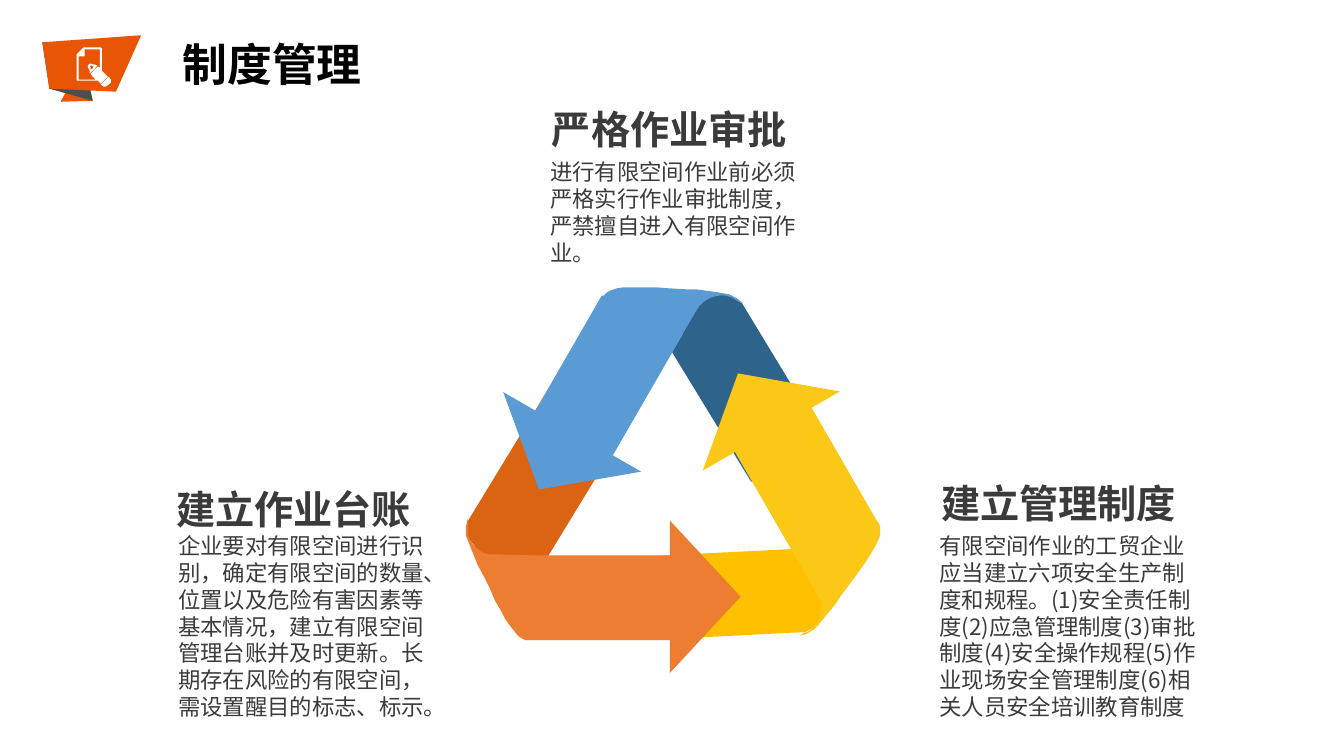
import pptx
import pptx.util
import pptx.dml.color
import pptx.enum.shapes
import pptx.enum.text
import lxml.etree

Inches = pptx.util.Inches
Pt = pptx.util.Pt
PP_ALIGN = pptx.enum.text.PP_ALIGN
AUTO_SIZE = pptx.enum.text.MSO_AUTO_SIZE
FONT = "Noto Sans CJK SC"
COLORS = {
    "black": "000000", "text": "3B3B3B", "white": "FFFFFF",
    "badge": "E85504", "badge_shade": "494F54",
    "orange": "ED7D31", "orange_shade": "DB6413",
    "blue": "5B9BD5", "blue_shade": "2E648B",
    "yellow": "FCC818", "yellow_shade": "FFC000",
}


def add_outline(shapes, color, *contours):
    builder = None
    for contour in contours:
        points = [(Inches(x), Inches(y)) for x, y in contour]
        if builder is None:
            builder = shapes.build_freeform(*points[0], scale=1.0)
        else:
            builder.move_to(*points[0])
        builder.add_line_segments(points[1:], close=True)
    shape = builder.convert_to_shape()
    shape.shadow.inherit = False
    shape.fill.solid()
    shape.fill.fore_color.rgb = pptx.dml.color.RGBColor.from_string(COLORS[color])
    shape.line.fill.background()


def write_text(shape, text, size, color, bold, align, spacing, wrap=True):
    frame = shape.text_frame
    frame.text = text
    frame.word_wrap = wrap
    frame.auto_size = AUTO_SIZE.SHAPE_TO_FIT_TEXT
    frame.vertical_anchor = pptx.enum.text.MSO_ANCHOR.TOP
    paragraph = frame.paragraphs[0]
    paragraph.alignment = align
    paragraph.line_spacing = Pt(spacing)
    font = paragraph.runs[0].font
    font.name = FONT
    font.size = Pt(size)
    font.bold = bold
    font.color.rgb = pptx.dml.color.RGBColor.from_string(COLORS[color])
    properties = paragraph.runs[0]._r.get_or_add_rPr()
    latin = properties.find(pptx.oxml.ns.qn("a:latin"))
    east_asian = lxml.etree.Element(pptx.oxml.ns.qn("a:ea"), typeface=FONT)
    latin.addnext(east_asian)


presentation = pptx.Presentation()
presentation.slide_width = Inches(13.33)
presentation.slide_height = Inches(7.5)
slide = presentation.slides.add_slide(presentation.slide_layouts[5])
shapes = slide.shapes

title = shapes.title
title.left, title.top, title.width, title.height = [
    Inches(value) for value in (1.7, 0.51, 2, 0.46)]
write_text(title, "制度管理", 32, "black", True, PP_ALIGN.CENTER, 24, wrap=False)

add_outline(shapes, "yellow_shade", [
    (6.41, 5.52), (8.4, 5.42), (8.12, 6.2), (7.99, 6.27), (6.45, 6.35)])

add_outline(shapes, "badge", [(0.92, 1), (0.83, 0.6), (0.6, 1.01)])
add_outline(shapes, "badge_shade", [
    (0.83, 0.6), (0.42, 0.42), (0.49, 0.88), (0.92, 1)])
add_outline(shapes, "badge", [(1.4, 0.35), (0.42, 0.42), (0.49, 0.88), (1.15, 0.91)])

pencil_end = [(1.1, 0.82), (1.05, 0.86), (1.04, 0.86), (1.03, 0.86), (1, 0.84),
              (1.08, 0.76), (1.1, 0.79)]
page_inside = [(0.99, 0.49), (0.84, 0.49), (0.84, 0.55), (0.84, 0.56), (0.78, 0.56),
               (0.78, 0.79), (0.95, 0.79), (0.91, 0.75), (0.9, 0.73), (0.91, 0.72),
               (0.96, 0.67), (0.97, 0.66), (0.99, 0.67), (0.99, 0.68)]
page_outside = [(1.01, 0.82), (1, 0.83), (0.99, 0.82), (0.97, 0.8), (0.77, 0.8),
                (0.76, 0.8), (0.76, 0.55), (0.76, 0.54), (0.83, 0.47), (0.84, 0.47),
                (1, 0.47), (1.01, 0.48), (1.01, 0.7), (1.06, 0.75), (1.07, 0.76),
                (1.06, 0.77)]
tip_inside = [(0.91, 0.65), (0.9, 0.65), (0.89, 0.65), (0.9, 0.67), (0.9, 0.69),
              (0.92, 0.68), (0.93, 0.66)]
tip_outside = [(0.93, 0.69), (0.92, 0.7), (0.89, 0.73), (0.89, 0.7), (0.88, 0.68),
               (0.87, 0.66), (0.88, 0.64), (0.9, 0.63), (0.92, 0.64), (0.94, 0.64),
               (0.97, 0.65), (0.95, 0.67)]
add_outline(shapes, "white", pencil_end, page_inside, page_outside,
            tip_inside, tip_outside)

add_outline(shapes, "orange_shade", [
    (6.21, 4.25), (5.16, 5.97), (4.63, 5.32), (4.64, 5.17), (5.45, 3.84)])
add_outline(shapes, "blue_shade", [
    (7.45, 4.78), (6.37, 3.01), (7.22, 2.92), (7.36, 3.01), (8.19, 4.38)])

blue_band = [(5.95, 4.74), (6.77, 3.32), (6.37, 3.1), (5.97, 2.93), (5.18, 4.3)]
blue_fold = [
    (6.72, 3.4), (5.96, 2.96), (5.99, 2.93), (6.02, 2.9), (6.06, 2.88), (6.12, 2.86),
    (6.19, 2.85), (6.27, 2.85), (6.38, 2.85), (6.5, 2.85), (6.63, 2.86), (6.8, 2.87),
    (6.9, 2.87), (7.12, 2.9), (7.23, 2.92), (7.31, 2.96), (7.37, 3.01), (7.32, 2.99),
    (7.29, 2.97), (7.26, 2.95), (7.22, 2.94), (7.18, 2.93), (7.12, 2.93), (7.06, 2.95),
    (7, 2.98), (6.94, 3.03), (6.89, 3.11)]
yellow_band = [(7.16, 4.26), (7.98, 5.68), (8.37, 5.45), (8.71, 5.19), (7.92, 3.82)]
yellow_fold = [
    (7.95, 5.62), (8.71, 5.18), (8.73, 5.22), (8.73, 5.26), (8.73, 5.31), (8.71, 5.36),
    (8.68, 5.42), (8.64, 5.49), (8.59, 5.57), (8.52, 5.67), (8.44, 5.78), (8.34, 5.91),
    (8.29, 5.99), (8.15, 6.16), (8.08, 6.24), (8, 6.29), (7.93, 6.31), (7.97, 6.28),
    (8.01, 6.27), (8.04, 6.25), (8.06, 6.23), (8.1, 6.19), (8.12, 6.15), (8.14, 6.09),
    (8.15, 6.03), (8.14, 5.96), (8.1, 5.89)]
orange_band = [(6.94, 5.51), (5.19, 5.51), (5.2, 5.94), (5.26, 6.35), (6.94, 6.35)]
orange_fold = [
    (5.26, 5.51), (5.26, 6.35), (5.21, 6.35), (5.17, 6.33), (5.14, 6.31), (5.1, 6.26),
    (5.06, 6.21), (5.01, 6.14), (4.97, 6.06), (4.91, 5.96), (4.86, 5.84), (4.79, 5.7),
    (4.74, 5.61), (4.66, 5.41), (4.62, 5.31), (4.62, 5.23), (4.64, 5.15), (4.64, 5.21),
    (4.64, 5.24), (4.64, 5.28), (4.64, 5.31), (4.66, 5.35), (4.69, 5.4), (4.73, 5.44),
    (4.78, 5.48), (4.85, 5.5), (4.93, 5.5)]

arrows = [
    ("blue", (4.72, 4.24, 1.58, 0.66), 210, blue_band, blue_fold),
    ("yellow", (6.7, 3.66, 1.57, 0.66), 330, yellow_band, yellow_fold),
    ("orange", (6.24, 5.57, 1.51, 0.7), 90, orange_band, orange_fold),
]
for color, head_box, rotation, band, fold in arrows:
    arrow = shapes.add_group_shape()
    head = arrow.shapes.add_shape(
        pptx.enum.shapes.MSO_SHAPE.ISOSCELES_TRIANGLE,
        *[Inches(value) for value in head_box])
    head.rotation = rotation
    head.shadow.inherit = False
    head.fill.solid()
    head.fill.fore_color.rgb = pptx.dml.color.RGBColor.from_string(COLORS[color])
    head.line.fill.background()
    add_outline(arrow.shapes, color, band)
    add_outline(arrow.shapes, color, fold)

sections = [
    ("建立作业台账", (1.65, 4.61, 2.8, 0.66), PP_ALIGN.LEFT, 44.7,
     "企业要对有限空间进行识别，确定有限空间的数量、位置以及危险有害因素等基本情况，"
     "建立有限空间管理台账并及时更新。长期存在风险的有限空间，需设置醒目的标志、标示。",
     (1.67, 5.23, 2.8, 1.99)),
    ("严格作业审批", (5.06, 1, 3.16, 0.57), PP_ALIGN.CENTER, 33.6,
     "进行有限空间作业前必须严格实行作业审批制度，严禁擅自进入有限空间作业。",
     (5.36, 1.52, 2.81, 1.18)),
    ("建立管理制度", (8.92, 4.71, 3.16, 0.57), PP_ALIGN.CENTER, 33.6,
     "有限空间作业的工贸企业应当建立六项安全生产制度和规程。(1)安全责任制度"
     "(2)应急管理制度(3)审批制度(4)安全操作规程(5)作业现场安全管理制度"
     "(6)相关人员安全培训教育制度",
     (9.22, 5.23, 2.8, 1.99)),
]
for heading, heading_box, align, spacing, body, body_box in sections:
    body_shape = shapes.add_textbox(*[Inches(value) for value in body_box])
    write_text(body_shape, body, 16, "text", False, PP_ALIGN.LEFT, 19.2)
    heading_shape = shapes.add_textbox(*[Inches(value) for value in heading_box])
    write_text(heading_shape, heading, 28, "text", True, align, spacing)

presentation.save("out.pptx")
